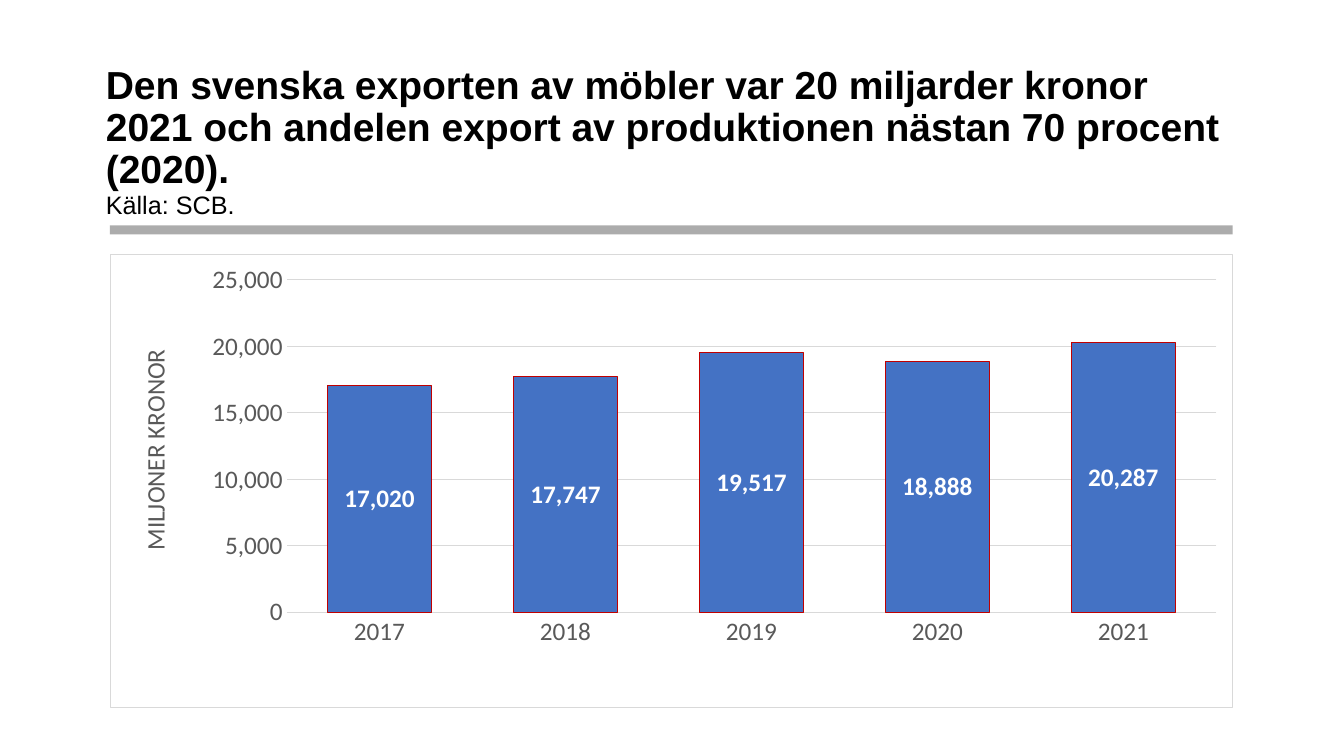
"""Build a slide on Swedish furniture exports with a title, a rule and a column chart."""
from lxml.etree import SubElement
from pptx import Presentation
from pptx.chart.data import CategoryChartData
from pptx.dml.color import RGBColor
from pptx.enum.chart import XL_CHART_TYPE as ChartType, XL_LABEL_POSITION as LabelPosition
from pptx.enum.chart import XL_TICK_MARK as TickMark
from pptx.enum.shapes import MSO_SHAPE as Shape
from pptx.enum.text import MSO_ANCHOR as Anchor, MSO_AUTO_SIZE as AutoSize, PP_ALIGN as Align
from pptx.oxml import parse_xml
from pptx.oxml.ns import nsdecls, qn
from pptx.util import Pt

LEFT, WIDTH = 78.5, 802
EXPORTS = {"2017": 17020, "2018": 17747, "2019": 19517, "2020": 18888, "2021": 20287}
HEADLINE = ("Den svenska exporten av möbler var 20 miljarder kronor 2021 "
            "och andelen export av produktionen nästan 70 procent (2020).")


def color(value):
    return RGBColor.from_string(value)


def style_font(font, name, size, value, bold=False):
    font.name, font.size, font.bold = name, Pt(size), bold
    font.color.rgb = color(value)


def style_line(line, value):
    line.color.rgb = color(value)
    line.width = Pt(0.75)


def add_title(slide, headline, source):
    title = slide.shapes.title
    title.left, title.top, title.width, title.height = Pt(68.4), Pt(49.7), Pt(823), Pt(104.4)
    frame = title.text_frame
    frame.text = f"{headline}\v{source}"
    frame.word_wrap, frame.auto_size = True, AutoSize.NONE
    frame.vertical_anchor = Anchor.MIDDLE
    paragraph = frame.paragraphs[0]
    paragraph.alignment, paragraph.line_spacing = Align.LEFT, 0.9
    headline_run, source_run = paragraph.runs
    style_font(headline_run.font, "Arial", 27.9, "000000", True)
    style_font(source_run.font, "Arial", 18, "000000")


def add_rule(slide, top, height):
    rule = slide.shapes.add_shape(Shape.RECTANGLE, Pt(LEFT), Pt(top), Pt(WIDTH), Pt(height))
    rule.shadow.inherit = False
    rule.line.fill.background()
    rule.fill.solid()
    rule.fill.fore_color.rgb = color("808080")
    rgb = rule.fill._xPr.find(".//" + qn("a:srgbClr"))
    SubElement(rgb, qn("a:alpha")).set("val", "65000")


def set_layout(parent, index, inner=False, **position):
    for layout in parent.findall(qn("c:layout")):
        parent.remove(layout)
    target = '<c:layoutTarget val="inner"/>' if inner else ""
    modes = "".join(f'<c:{axis}Mode val="edge"/>' for axis in "xy")
    places = "".join(f'<c:{key} val="{value}"/>' for key, value in position.items())
    parent.insert(index, parse_xml(
        f'<c:layout {nsdecls("c")}><c:manualLayout>{target}{modes}{places}'
        '</c:manualLayout></c:layout>'))


def frame_chart(chart):
    space = chart._chartSpace
    space.find(qn("c:chart")).addnext(parse_xml(
        f'<c:spPr {nsdecls("c", "a")}><a:solidFill><a:srgbClr val="FFFFFF"/></a:solidFill>'
        '<a:ln w="9525"><a:solidFill><a:srgbClr val="D9D9D9"/></a:solidFill></a:ln></c:spPr>'))
    set_layout(space.find(".//" + qn("c:plotArea")), 0, inner=True,
               x=0.157, y=0.056, w=0.829, h=0.734)


def format_axes(chart):
    years, values = chart.category_axis, chart.value_axis
    for axis in (years, values):
        axis.major_tick_mark = axis.minor_tick_mark = TickMark.NONE
        style_font(axis.tick_labels.font, "Calibri", 18, "595959")
    style_line(years.format.line, "D9D9D9")
    values.format.line.fill.background()
    style_line(values.major_gridlines.format.line, "D9D9D9")
    values.minimum_scale, values.maximum_scale, values.major_unit = 0, 25000, 5000
    values.tick_labels.number_format = "#,##0"
    values.tick_labels.number_format_is_linked = False
    title = values.axis_title
    title.text_frame.text = "MILJONER KRONOR"
    style_font(title.text_frame.paragraphs[0].runs[0].font, "Calibri", 18, "595959")
    body = title.text_frame._txBody.bodyPr
    body.set("rot", "-5400000")
    body.set("vert", "horz")
    set_layout(title._element, 1, x=0.02, y=0.2)


def format_columns(plot):
    plot.gap_width, plot.overlap, plot.vary_by_categories = 80, 25, False
    series = plot.series[0]
    series.format.fill.solid()
    series.format.fill.fore_color.rgb = color("4472C4")
    style_line(series.format.line, "C00000")
    labels = series.data_labels
    labels.show_value, labels.position = True, LabelPosition.CENTER
    labels.number_format, labels.number_format_is_linked = "#,##0", False
    style_font(labels.font, "Calibri", 18, "FFFFFF", True)


def add_export_chart(slide, top, height):
    data = CategoryChartData()
    data.categories = list(EXPORTS)
    data.add_series("Series 1", list(EXPORTS.values()))
    chart = slide.shapes.add_chart(ChartType.COLUMN_CLUSTERED, Pt(LEFT), Pt(top),
                                   Pt(WIDTH), Pt(height), data).chart
    chart.has_legend = chart.has_title = False
    style_font(chart.font, "Calibri", 9, "000000")
    frame_chart(chart)
    format_axes(chart)
    format_columns(chart.plots[0])


def main():
    presentation = Presentation()
    presentation.slide_width, presentation.slide_height = Pt(960), Pt(540)
    slide = presentation.slides.add_slide(presentation.slide_layouts[5])
    add_title(slide, HEADLINE, "Källa: SCB.")
    add_rule(slide, 161, 6.5)
    add_export_chart(slide, 181.5, 324)
    presentation.save("out.pptx")


if __name__ == "__main__":
    main()
